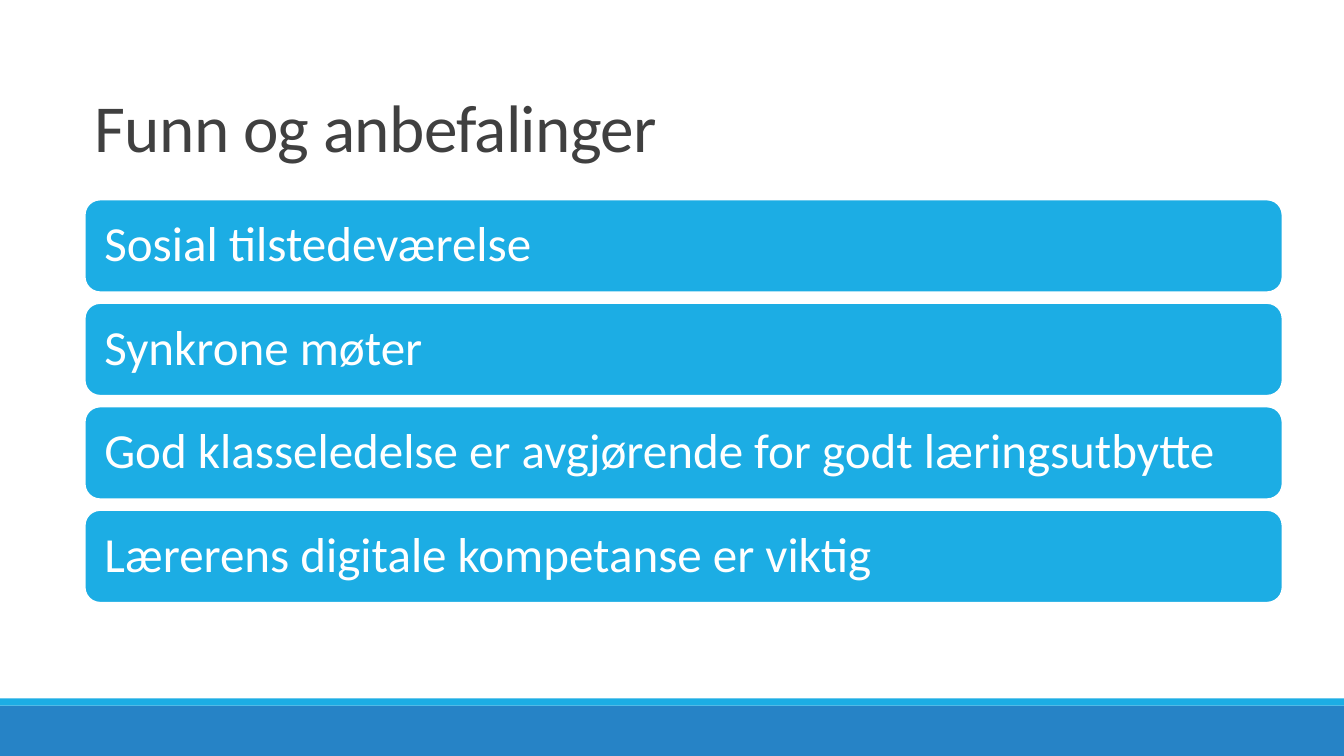
import pptx
import pptx.dml.color
import pptx.enum.shapes
import pptx.enum.text
import pptx.util
from pptx.util import Inches

FONT = "Calibri"
FINDINGS = [
    "Sosial tilstedeværelse",
    "Synkrone møter",
    "God klasseledelse er avgjørende for godt læringsutbytte",
    "Lærerens digitale kompetanse er viktig",
]


def colour(hex_code):
    return pptx.dml.color.RGBColor.from_string(hex_code)


def style_text(paragraph, size, hex_code, line_spacing):
    paragraph.alignment = pptx.enum.text.PP_ALIGN.LEFT
    paragraph.line_spacing = line_spacing
    paragraph.font.name = FONT
    paragraph.font.size = pptx.util.Pt(size)
    paragraph.font.color.rgb = colour(hex_code)


def add_block(slide, preset, left, top, width, height, fill):
    """Add a filled shape without outline or shadow; lengths are in inches."""
    block = slide.shapes.add_shape(
        preset, Inches(left), Inches(top), Inches(width), Inches(height))
    block.shadow.inherit = False
    block.fill.solid()
    block.fill.fore_color.rgb = colour(fill)
    block.line.fill.background()
    return block


def add_footer(slide, left, top, width, height):
    stripe = 0.07
    rectangle = pptx.enum.shapes.MSO_SHAPE.RECTANGLE
    add_block(slide, rectangle, left, top + stripe, width, height - stripe, "2683C6")
    add_block(slide, rectangle, left, top, width, stripe, "1CADE4")


def set_title(slide, text, left, top, width, height):
    title = slide.shapes.title
    title.left, title.top = Inches(left), Inches(top)
    title.width, title.height = Inches(width), Inches(height)
    frame = title.text_frame
    frame.text = text
    frame.auto_size = pptx.enum.text.MSO_AUTO_SIZE.NONE
    frame.vertical_anchor = pptx.enum.text.MSO_ANCHOR.BOTTOM
    style_text(frame.paragraphs[0], 48, "404040", 0.85)
    # Letter spacing, in hundredths of a point
    frame.paragraphs[0].runs[0].font._element.set("spc", "-50")


def add_findings(slide, findings, left, top, width, height):
    gap = 0.107
    bar_height = (height - gap * (len(findings) - 1)) / len(findings)
    for index, finding in enumerate(findings):
        bar = add_block(
            slide, pptx.enum.shapes.MSO_SHAPE.ROUNDED_RECTANGLE,
            left, top + index * (bar_height + gap), width, bar_height, "1CADE4")
        bar.line.color.rgb = colour("FFFFFF")
        bar.line.width = pptx.util.Pt(1.25)
        frame = bar.text_frame
        frame.text = finding
        frame.word_wrap = True
        frame.vertical_anchor = pptx.enum.text.MSO_ANCHOR.MIDDLE
        frame.margin_left = frame.margin_right = Inches(0.15)
        frame.margin_top = frame.margin_bottom = Inches(0.15)
        style_text(frame.paragraphs[0], 35, "FFFFFF", 0.9)


def main():
    presentation = pptx.Presentation()
    presentation.slide_width = Inches(13.33)
    presentation.slide_height = Inches(7.5)
    slide = presentation.slides.add_slide(presentation.slide_layouts[5])
    add_footer(slide, 0, 6.93, 13.33, 0.57)
    set_title(slide, "Funn og anbefalinger", 0.84, 0.76, 8.5, 0.94)
    add_findings(slide, FINDINGS, 0.84, 1.98, 11.88, 4)
    presentation.save("out.pptx")


if __name__ == "__main__":
    main()
